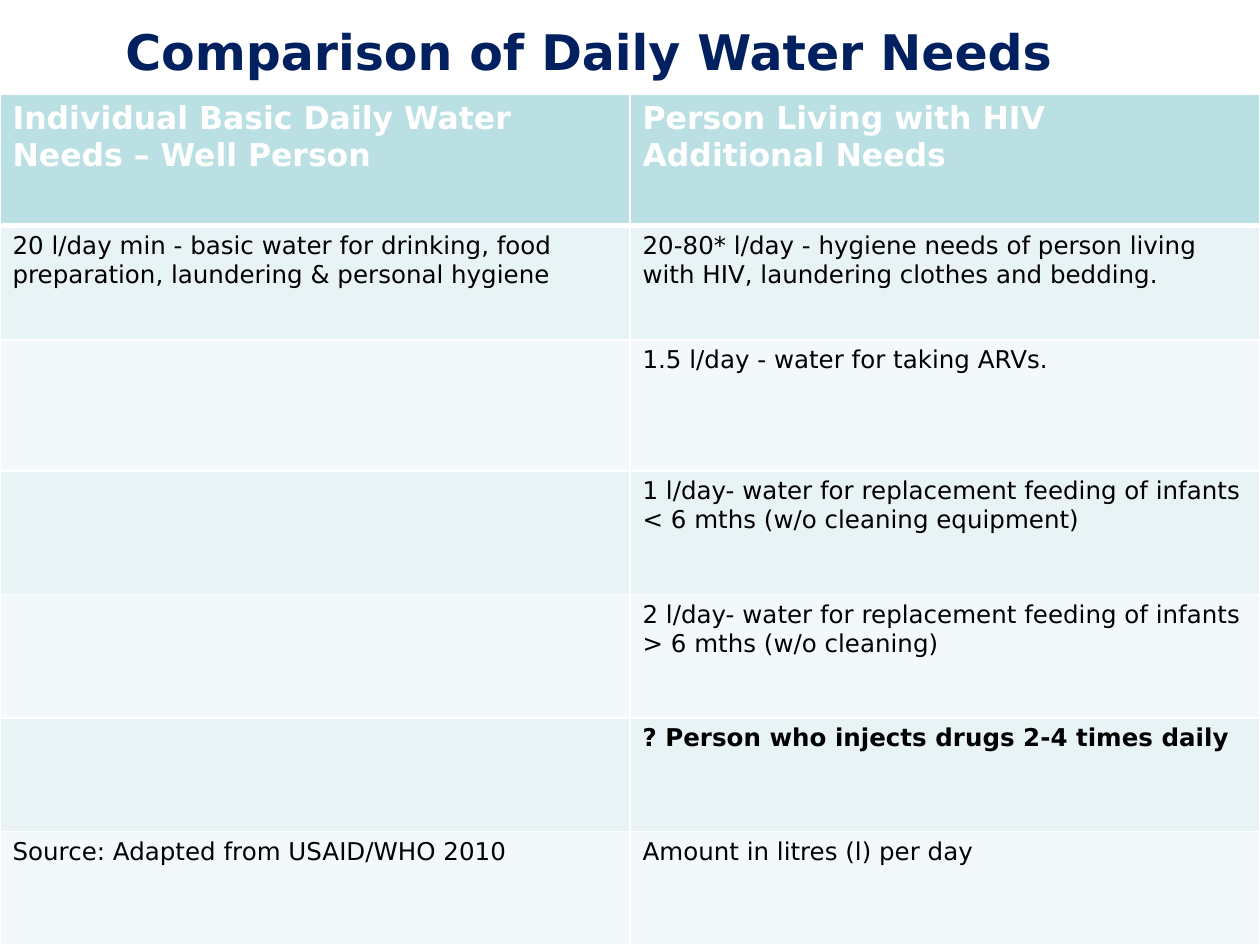
"""Build a slide with a table comparing daily water needs."""
from lxml import etree
from pptx import Presentation
from pptx import util as u
from pptx.dml import color
from pptx.enum import text
from pptx.oxml import ns

COLORS = {"title": "002060", "header": "BBE0E3", "odd": "E7F3F4",
          "even": "F3F9FA", "white": "FFFFFF", "body": "000000"}
FONT = "DejaVu Sans"
ROW_HEIGHTS = [2.64, 2.31, 2.64, 2.49, 2.49, 2.29, 2.29]
ROWS = [
    ("Individual Basic Daily Water Needs – Well Person",
     "Person Living with HIV\nAdditional Needs"),
    ("20 l/day min - basic water for drinking, food preparation, laundering & personal hygiene",
     "20-80* l/day - hygiene needs of person living with HIV, laundering clothes and bedding."),
    ("", "1.5 l/day - water for taking ARVs."),
    ("", "1 l/day- water for replacement feeding of infants < 6 mths (w/o cleaning equipment)"),
    ("", "2 l/day- water for replacement feeding of infants > 6 mths (w/o cleaning)"),
    ("", "? Person who injects drugs 2-4 times daily"),
    ("Source: Adapted from USAID/WHO 2010", "Amount in litres (l) per day"),
]
BOLD_ROWS = (0, 5)


def style_paragraph(paragraph, size, color_name, bold):
    font = paragraph.font
    font.name, font.size, font.bold = FONT, u.Pt(size), bold
    font.color.rgb = color.RGBColor.from_string(COLORS[color_name])


def add_border(cell, side, points):
    properties = cell._tc.get_or_add_tcPr()
    line = etree.SubElement(properties, ns.qn(f"a:ln{side}"), w=str(u.Pt(points)))
    fill = etree.SubElement(line, ns.qn("a:solidFill"))
    etree.SubElement(fill, ns.qn("a:srgbClr"), val=COLORS["white"])


presentation = Presentation()
presentation.slide_width, presentation.slide_height = u.Cm(25.4), u.Cm(19.05)
slide = presentation.slides.add_slide(presentation.slide_layouts[5])

title = slide.shapes.title
title.left, title.top, title.width, title.height = u.Cm(1.07), u.Cm(0.43), u.Cm(21.59), u.Cm(1.7)
frame = title.text_frame
frame.text = "Comparison of Daily Water Needs"
frame.margin_left = frame.margin_top = frame.margin_right = frame.margin_bottom = 0
frame.vertical_anchor = text.MSO_ANCHOR.TOP
frame.auto_size = text.MSO_AUTO_SIZE.NONE
frame.paragraphs[0].alignment = text.PP_ALIGN.CENTER
style_paragraph(frame.paragraphs[0], 28, "title", True)

table = slide.shapes.add_table(len(ROWS), 2, 0, u.Cm(1.9), u.Cm(25.4), u.Cm(17.15)).table
for row_index, (height, contents) in enumerate(zip(ROW_HEIGHTS, ROWS)):
    table.rows[row_index].height = u.Cm(height)
    is_header = row_index == 0
    fill_name = "header" if is_header else ("even", "odd")[row_index % 2]
    for column_index, content in enumerate(contents):
        cell = table.cell(row_index, column_index)
        cell.text = content
        for side in "LRTB":
            heavy = (row_index, side) in ((0, "B"), (1, "T"))
            add_border(cell, side, 3 if heavy else 1)
        cell.fill.solid()
        cell.fill.fore_color.rgb = color.RGBColor.from_string(COLORS[fill_name])
        for paragraph in cell.text_frame.paragraphs:
            style_paragraph(paragraph, 18 if is_header else 14,
                            "white" if is_header else "body", row_index in BOLD_ROWS)

presentation.save("out.pptx")
